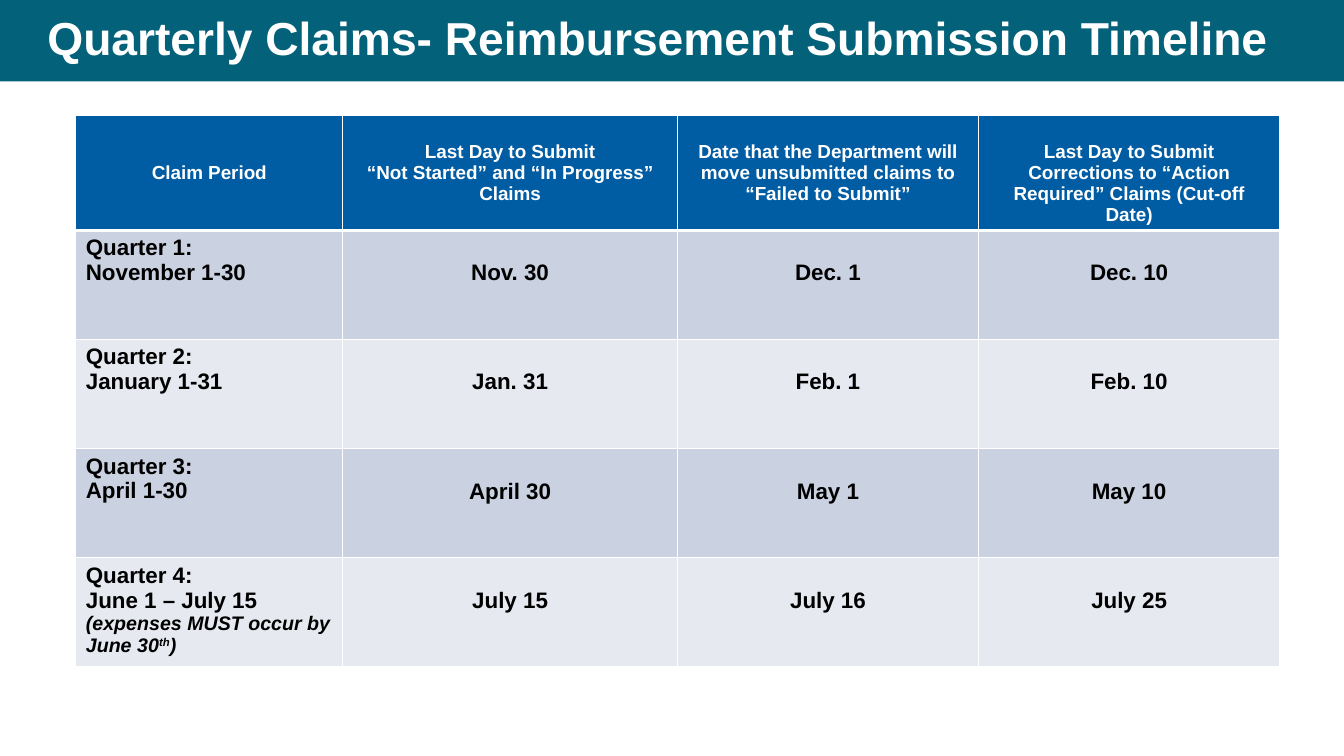
from lxml.etree import SubElement
from pptx import Presentation
from pptx.dml.color import RGBColor
from pptx.enum.shapes import MSO_SHAPE
from pptx.enum.text import MSO_ANCHOR, MSO_AUTO_SIZE, PP_ALIGN
from pptx.oxml.ns import qn
from pptx.util import Cm, Pt


def colour(value):
    """Turn a hex string into a colour."""
    return RGBColor.from_string(value)


class TimelineSlide:
    """Hold the slide style and draw each kind of element."""

    FONT = "Arial"
    TEAL, BLUE, WHITE, BLACK = "03617A", "005CA3", "FFFFFF", "000000"
    STRIPES = ("CAD1E0", "E6E9F0")
    HEADER_SIZE, BODY_SIZE, NOTE_SIZE = 13.5, 16, 14
    BAND_HEIGHT = Cm(2.05)

    def __init__(self, deck):
        """Add a title-only page to the deck."""
        self.deck = deck
        self.page = deck.slides.add_slide(deck.slide_layouts[5])

    def span(self, para, text, size, ink, italic=False, raised=False):
        """Add one bold run to a paragraph."""
        span = para.add_run()
        span.text = text
        font = span.font
        font.name, font.size, font.bold, font.italic = self.FONT, Pt(size), True, italic
        font.color.rgb = colour(ink)
        if raised:
            font._element.set("baseline", "30000")

    def band(self):
        """Draw the title band behind the title."""
        band = self.page.shapes.add_shape(
            MSO_SHAPE.RECTANGLE, 0, 0, self.deck.slide_width, self.BAND_HEIGHT)
        band.shadow.inherit = False
        band.fill.solid()
        band.fill.fore_color.rgb = colour(self.TEAL)
        band.line.fill.background()
        self.page.shapes.title.element.addprevious(band.element)

    def title(self, text):
        """Place and fill the title placeholder."""
        title = self.page.shapes.title
        title.left, title.top = Cm(0.94), Cm(0)
        title.width, title.height = Cm(31.3), self.BAND_HEIGHT
        frame = title.text_frame
        frame.word_wrap = True
        frame.auto_size = MSO_AUTO_SIZE.NONE
        frame.vertical_anchor = MSO_ANCHOR.MIDDLE
        para = frame.paragraphs[0]
        para.alignment = PP_ALIGN.LEFT
        para.line_spacing = 0.9
        self.span(para, text, 33, self.WHITE)

    def borders(self, cell, top, bottom):
        """Give a cell white borders of the given widths in points."""
        properties = cell._tc.get_or_add_tcPr()
        widths = {"a:lnL": 1, "a:lnR": 1, "a:lnT": top, "a:lnB": bottom}
        for index, (side, width) in enumerate(widths.items()):
            line = SubElement(properties, qn(side), w=str(Pt(width)))
            properties.insert(index, line)
            fill = SubElement(line, qn("a:solidFill"))
            SubElement(fill, qn("a:srgbClr"), val=self.WHITE)

    def cell(self, cell, paragraphs, fill, ink, size, centred, top):
        """Fill one table cell, each paragraph a list of runs."""
        cell.fill.solid()
        cell.fill.fore_color.rgb = colour(fill)
        cell.margin_top = Cm(top)
        frame = cell.text_frame
        frame.word_wrap = True
        for index, runs in enumerate(paragraphs):
            para = frame.add_paragraph() if index else frame.paragraphs[0]
            para.alignment = PP_ALIGN.CENTER if centred else PP_ALIGN.LEFT
            for text, *style in runs:
                self.span(para, text, *(style or (size, ink)))

    def table(self, headers, quarters):
        """Draw the timeline table."""
        widths = [Cm(6.73), Cm(8.43), Cm(7.59), Cm(7.59)]
        heights = [Cm(2.9)] + [Cm(2.75)] * len(quarters)
        table = self.page.shapes.add_table(
            len(heights), len(widths), Cm(1.91), Cm(2.9), sum(widths), sum(heights)).table
        for column, width in zip(table.columns, widths):
            column.width = width
        for row, height in zip(table.rows, heights):
            row.height = height
        for column, lines in enumerate(headers):
            cell = table.cell(0, column)
            self.cell(cell, [[(line,)] for line in lines], self.BLUE, self.WHITE,
                      self.HEADER_SIZE, True, 0.66 if column else 1.19)
            self.borders(cell, 1, 3)
        for row, (period, *dates) in enumerate(quarters, 1):
            heading = [(f"Quarter {row}:",)]
            for column, content in enumerate([[heading, period]] + [[[(date,)]] for date in dates]):
                cell = table.cell(row, column)
                self.cell(cell, content, self.STRIPES[(row - 1) % 2], self.BLACK,
                          self.BODY_SIZE, column > 0, 0.76 if column else 0.13)
                self.borders(cell, 3 if row == 1 else 1, 1)


def main():
    """Build and save the slide."""
    deck = Presentation()
    deck.slide_width, deck.slide_height = Cm(33.87), Cm(19.05)
    slide = TimelineSlide(deck)
    slide.band()
    slide.title("Quarterly Claims- Reimbursement Submission Timeline")
    headers = [
        ["Claim Period"],
        ["Last Day to Submit", "“Not Started” and “In Progress” Claims"],
        ["Date that the Department will move unsubmitted claims to “Failed to Submit”"],
        ["Last Day to Submit Corrections to “Action Required” Claims (Cut-off Date)"],
    ]
    note = (slide.NOTE_SIZE, slide.BLACK, True)
    final_period = [
        ("June 1 – July 15 ",),
        ("(expenses MUST occur by June 30", *note),
        ("th", *note, True),
        (")", *note),
    ]
    quarters = [
        ([("November 1-30",)], "Nov. 30", "Dec. 1", "Dec. 10"),
        ([("January 1-31",)], "Jan. 31", "Feb. 1", "Feb. 10"),
        ([("April 1-30",)], "April 30", "May 1", "May 10"),
        (final_period, "July 15", "July 16", "July 25"),
    ]
    slide.table(headers, quarters)
    deck.save("out.pptx")


if __name__ == "__main__":
    main()
